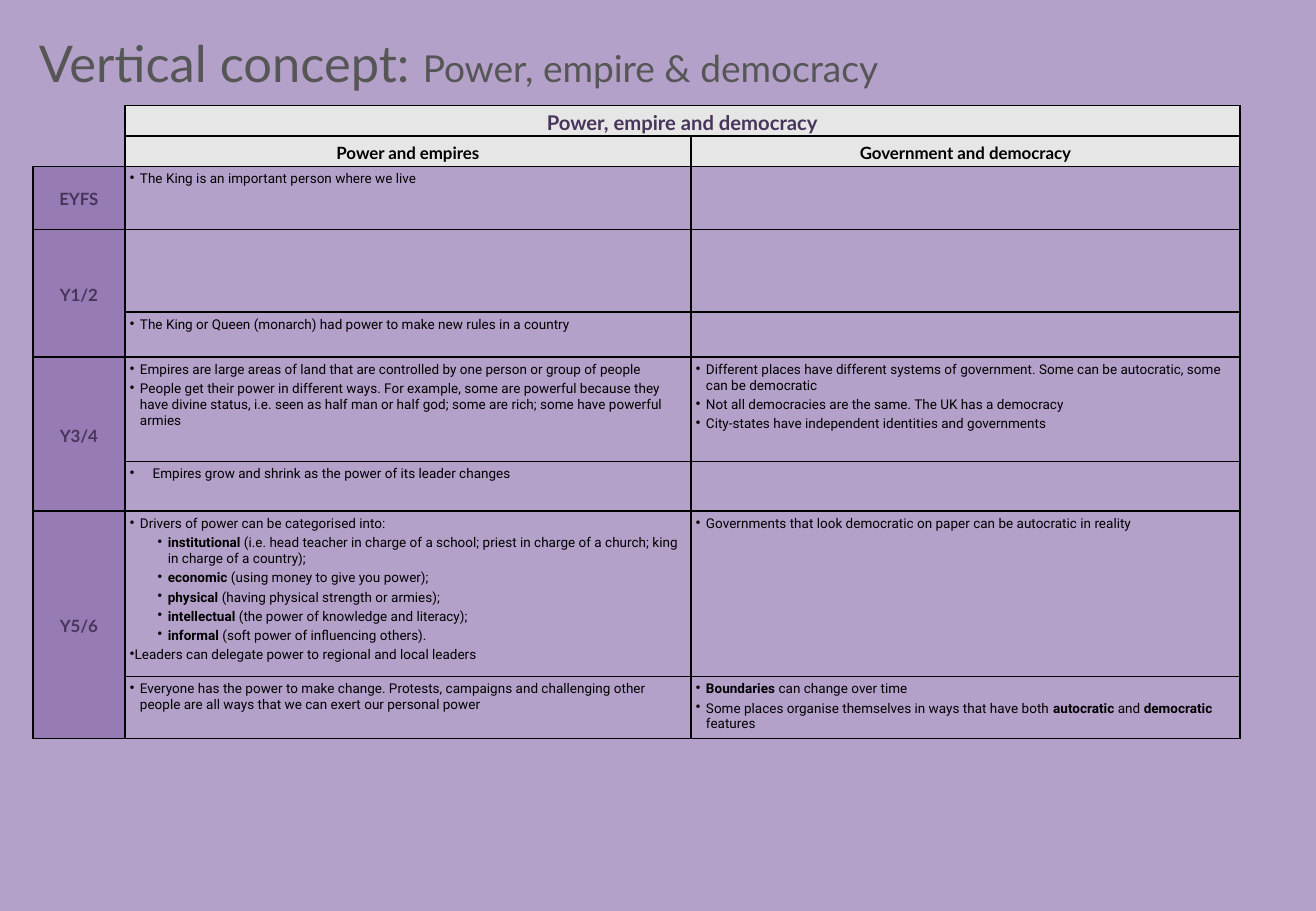
from dataclasses import dataclass

from lxml import etree
from pptx import Presentation
from pptx.dml.color import RGBColor
from pptx.enum.text import MSO_ANCHOR, PP_ALIGN
from pptx.oxml.ns import qn
from pptx.util import Pt

MIDDLE, CENTER = MSO_ANCHOR.MIDDLE, PP_ALIGN.CENTER
COLORS = {
    "background": "B4A1CA", "title": "565656", "heading": "48355B",
    "text": "000000", "header": "E6E6E6", "year": "8262A6",
}
COLUMN_WIDTHS = (54.5, 335.5, 325.5)
ROW_HEIGHTS = (18, 18, 37.5, 49, 26.6, 61.9, 29.5, 97.9, 36)
BORDER_WIDTH = 1


@dataclass
class Bullet:
    """One bulleted paragraph; words between asterisks are bold."""
    text: str
    margin: float = 6
    hanging: float = 6
    level: int = 0
    after: float = 2


@dataclass
class Label:
    row: int
    column: int
    text: str
    fill: str
    color: str = "heading"
    size: float = 10
    rows: int = 1
    columns: int = 1


LABELS = (
    Label(0, 1, "Power, empire and democracy", "header", size=12, columns=2),
    Label(1, 1, "Power and empires", "header", "text"),
    Label(1, 2, "Government and democracy", "header", "text"),
    Label(2, 0, "EYFS", "year"),
    Label(3, 0, "Y1/2", "year", rows=2),
    Label(5, 0, "Y3/4", "year", rows=2),
    Label(7, 0, "Y5/6", "year", rows=2),
)

DRIVERS = (
    "*institutional* (i.e. head teacher in charge of a school; priest in charge of a church; "
    "king in charge of a country);",
    "*economic* (using money to give you power);",
    "*physical* (having physical strength or armies);",
    "*intellectual* (the power of knowledge and literacy);",
    "*informal* (soft power of influencing others).",
)

BULLETS: dict[tuple[int, int], list[Bullet]] = {
    (2, 1): [Bullet("The King is an important person where we live")],
    (4, 1): [Bullet("The King or Queen (monarch) had power to make new rules in a country")],
    (5, 1): [
        Bullet("Empires are large areas of land that are controlled by one person or group of people"),
        Bullet("People get their power in different ways. For example, some are powerful because they "
               "have divine status, i.e. seen as half man or half god; some are rich; some have "
               "powerful armies"),
    ],
    (5, 2): [
        Bullet("Different places have different systems of government. Some can be autocratic, "
               "some can be democratic"),
        Bullet("Not all democracies are the same. The UK has a democracy"),
        Bullet("City-states have independent identities and governments"),
    ],
    (6, 1): [Bullet("Empires grow and shrink as the power of its leader changes", 13.5, 13.5, after=4)],
    (7, 1): [
        Bullet("Drivers of power can be categorised into:"),
        *(Bullet(driver, margin=22.5, level=1) for driver in DRIVERS),
        Bullet("Leaders can delegate power to regional and local leaders", 0, 18.5),
    ],
    (7, 2): [Bullet("Governments that look democratic on paper can be autocratic in reality")],
    (8, 1): [Bullet("Everyone has the power to make change. Protests, campaigns and challenging other "
                    "people are all ways that we can exert our personal power")],
    (8, 2): [
        Bullet("*Boundaries* can change over time"),
        Bullet("Some places organise themselves in ways that have both *autocratic* and "
               "*democratic* features"),
    ],
}


def rgb(name: str) -> RGBColor:
    return RGBColor.from_string(COLORS[name])


def set_margins(cell, side: float, end: float) -> None:
    cell.margin_left = cell.margin_right = Pt(side)
    cell.margin_top = cell.margin_bottom = Pt(end)


def add_borders(cell, is_corner: bool) -> None:
    """Rule all four sides, or only right and bottom for the blank corner."""
    properties = cell._tc.get_or_add_tcPr()
    for side in ("L", "R", "T", "B"):
        line = etree.SubElement(properties, qn(f"a:ln{side}"), w=str(Pt(BORDER_WIDTH)))
        if is_corner and side in "LT":
            etree.SubElement(line, qn("a:noFill"))
        else:
            fill = etree.SubElement(line, qn("a:solidFill"))
            etree.SubElement(fill, qn("a:srgbClr"), val=COLORS["text"])


def write_label(table, label: Label) -> None:
    cell = table.cell(label.row, label.column)
    if label.rows > 1 or label.columns > 1:
        cell.merge(table.cell(label.row + label.rows - 1, label.column + label.columns - 1))
    set_margins(cell, 4.5, 0)
    cell.vertical_anchor = MIDDLE
    cell.fill.solid()
    cell.fill.fore_color.rgb = rgb(label.fill)
    if label.fill == "year":
        color = cell._tc.tcPr.find(qn("a:solidFill")).find(qn("a:srgbClr"))
        etree.SubElement(color, qn("a:alpha"), val="60000")
    para = cell.text_frame.paragraphs[0]
    para.text = label.text
    para.alignment = CENTER
    para.line_spacing = 1.15
    para.space_after = Pt(10)
    font = para.font
    font.name, font.size, font.bold = "Lato", Pt(label.size), True
    font.color.rgb = rgb(label.color)


def write_bullets(cell, bullets: list[Bullet]) -> None:
    for index, bullet in enumerate(bullets):
        frame = cell.text_frame
        para = frame.add_paragraph() if index else frame.paragraphs[0]
        para.level = bullet.level
        para.space_after = Pt(bullet.after)
        properties = para._p.get_or_add_pPr()
        properties.set("marL", str(Pt(bullet.margin)))
        properties.set("indent", str(-Pt(bullet.hanging)))
        etree.SubElement(properties, qn("a:buChar"), char="•")
        para.font.name, para.font.size = "Roboto", Pt(8)
        para.font.color.rgb = rgb("text")
        for position, piece in enumerate(bullet.text.split("*")):
            if piece:
                span = para.add_run()
                span.text = piece
                span.font.bold = position % 2 == 1


def add_title(page) -> None:
    box = page.shapes.add_textbox(Pt(16), Pt(18.7), Pt(606), Pt(36))
    frame = box.text_frame
    frame.word_wrap = True
    frame.vertical_anchor = MIDDLE
    para = frame.paragraphs[0]
    para.font.name = "Lato"
    para.font.color.rgb = rgb("title")
    for text, size in (("Vertical concept: ", 30), ("Power, empire & democracy", 22)):
        span = para.add_run()
        span.text = text
        span.font.size = Pt(size)


def add_concept_table(page) -> None:
    frame = page.shapes.add_table(len(ROW_HEIGHTS), len(COLUMN_WIDTHS), Pt(19.5), Pt(62.6),
                                  Pt(sum(COLUMN_WIDTHS)), Pt(sum(ROW_HEIGHTS)))
    table = frame.table
    table.first_row = table.horz_banding = False
    for column, width in zip(table.columns, COLUMN_WIDTHS):
        column.width = Pt(width)
    labelled = {(label.row, label.column) for label in LABELS}
    for row, height in enumerate(ROW_HEIGHTS):
        table.rows[row].height = Pt(height)
        for column in range(len(COLUMN_WIDTHS)):
            cell = table.cell(row, column)
            add_borders(cell, is_corner=row < 2 and column == 0)
            cell.fill.background()
            set_margins(cell, 3, 3)
            if (row, column) in BULLETS:
                write_bullets(cell, BULLETS[row, column])
            elif (row, column) not in labelled:
                etree.SubElement(cell.text_frame.paragraphs[0]._p, qn("a:endParaRPr"), sz="800")
    table.cell(0, 0).merge(table.cell(1, 0))
    for label in LABELS:
        write_label(table, label)


def main() -> None:
    deck = Presentation()
    deck.slide_width, deck.slide_height = Pt(780), Pt(540)
    page = deck.slides.add_slide(deck.slide_layouts[6])
    page.background.fill.solid()
    page.background.fill.fore_color.rgb = rgb("background")
    add_title(page)
    add_concept_table(page)
    deck.save("out.pptx")


if __name__ == "__main__":
    main()
